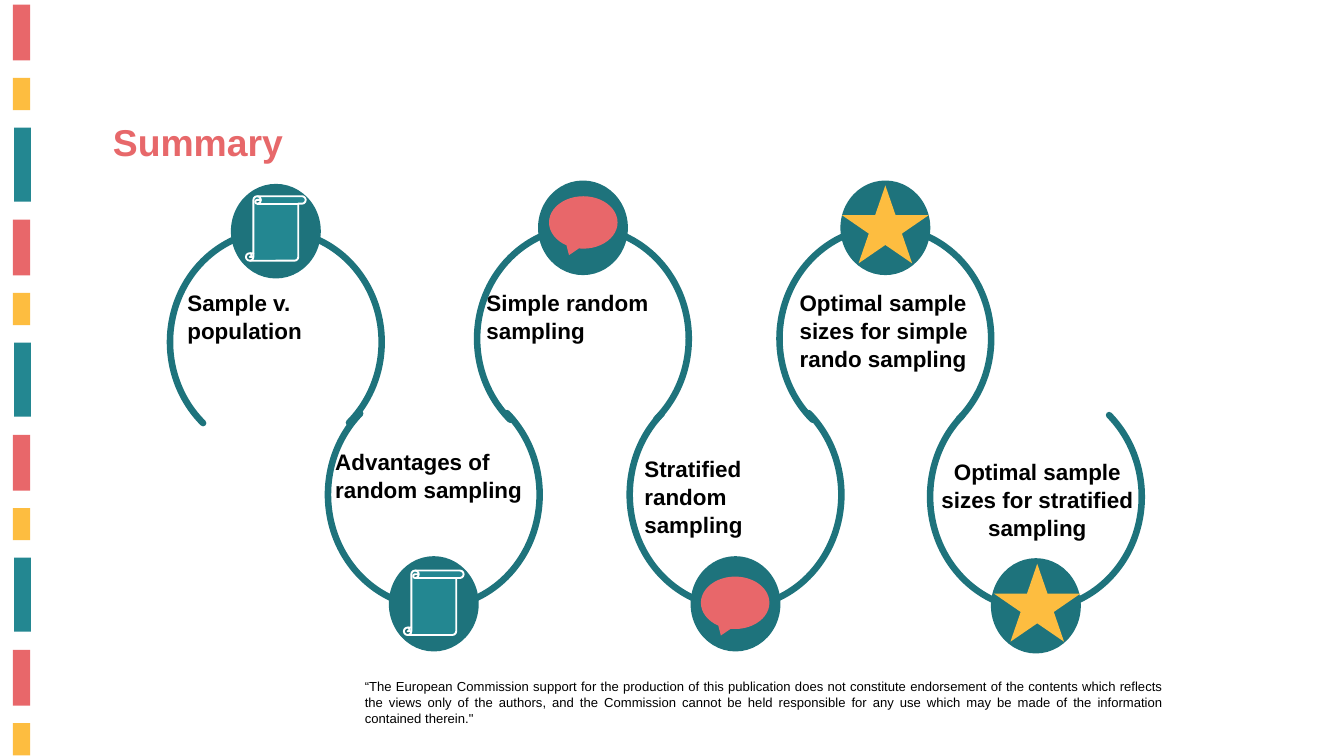
"""Build the Summary slide: six topics along a winding path."""
import pptx
import pptx.dml.color
import pptx.enum.shapes
import pptx.enum.text
import pptx.util

RGBColor = pptx.dml.color.RGBColor
CORAL = RGBColor(0xE8, 0x67, 0x6A)
TITLE_CORAL = RGBColor(0xE7, 0x68, 0x6A)
AMBER = RGBColor(0xFD, 0xBD, 0x40)
TEAL = RGBColor(0x23, 0x87, 0x91)
DEEP_TEAL = RGBColor(0x1E, 0x73, 0x7C)
BLACK = RGBColor(0, 0, 0)
WHITE = RGBColor(0xFF, 0xFF, 0xFF)

SHAPE = pptx.enum.shapes.MSO_SHAPE
ALIGN = pptx.enum.text.PP_ALIGN
Pt = pptx.util.Pt

deck = pptx.Presentation()
deck.slide_width = pptx.util.Inches(20)
deck.slide_height = pptx.util.Inches(11.25)
COLUMN = deck.slide_width / 20
ROW = deck.slide_height / 11.25
slide = deck.slides.add_slide(deck.slide_layouts[5])


def draw(parent, kind, left, top, width, height, fill=None, line=None, weight=0):
    shape = parent.add_shape(kind, int(left * COLUMN), int(top * ROW),
                             int(width * COLUMN), int(height * ROW))
    shape.shadow.inherit = False
    if fill is None:
        shape.fill.background()
    else:
        shape.fill.solid()
        shape.fill.fore_color.rgb = fill
    if line is None:
        shape.line.fill.background()
    else:
        shape.line.color.rgb = line
        shape.line.width = Pt(weight)
    return shape


def write(box, left, top, width, height, words, size, color, bold, align, spacing):
    box.left, box.top = int(left * COLUMN), int(top * ROW)
    box.width, box.height = int(width * COLUMN), int(height * ROW)
    frame = box.text_frame
    frame.word_wrap = True
    frame.auto_size = pptx.enum.text.MSO_AUTO_SIZE.NONE
    frame.vertical_anchor = pptx.enum.text.MSO_ANCHOR.TOP
    frame.text = words
    paragraph = frame.paragraphs[0]
    paragraph.alignment = align
    paragraph.line_spacing = spacing
    paragraph.font.name = "Arial"
    paragraph.font.size = Pt(size)
    paragraph.font.bold = bold
    paragraph.font.color.rgb = color


STRIPE_PERIOD = 3.2
STRIPES = [(0.19, 0.07, 0.26, 0.83, CORAL, 4),
           (0.19, 1.16, 0.26, 0.48, AMBER, 4),
           (0.21, 1.9, 0.25, 1.1, TEAL, 3)]
for left, top, width, height, color, count in STRIPES:
    for repeat in range(count):
        draw(slide.shapes, SHAPE.RECTANGLE, left, top + repeat * STRIPE_PERIOD,
             width, height, color)

write(slide.shapes.title, 1.58, 1.72, 6.58, 0.77, "Summary", 40, TITLE_CORAL,
      True, ALIGN.LEFT, 1)
write(slide.shapes.add_textbox(0, 0, 0, 0), 5.33, 10.04, 12.08, 0.81,
      "“The European Commission support for the production of this publication "
      "does not constitute endorsement of the contents which reflects the views "
      "only of the authors, and the Commission cannot be held responsible for any "
      "use which may be made of the information contained therein.\"",
      14, BLACK, False, ALIGN.JUSTIFY, 1.03)

SCROLL = (SHAPE.VERTICAL_SCROLL, 0.89, 0.96, TEAL, WHITE, 2)
SPEECH = (SHAPE.OVAL_CALLOUT, 1.02, 0.78, CORAL, None, 0)
STAR = (SHAPE.STAR_5_POINT, 1.29, 1.16, AMBER, None, 0)
TOPICS = [
    ("Sample v. population", 2.53, 3.43, False, (2.69, 4.24, 2.9, 1.31),
     SCROLL, (3.66, 2.92), ALIGN.LEFT),
    ("Advantages of random sampling", 4.88, 5.68, True, (4.89, 6.61, 3.08, 1.31),
     SCROLL, (6.01, 8.49), ALIGN.LEFT),
    ("Simple random sampling", 7.1, 3.38, False, (7.14, 4.24, 3.08, 1.31),
     SPEECH, (8.17, 2.92), ALIGN.LEFT),
    ("Stratified random sampling", 9.37, 5.68, True, (9.49, 6.71, 2.9, 1.72),
     SPEECH, (10.43, 8.58), ALIGN.LEFT),
    ("Optimal sample sizes for simple rando sampling", 11.6, 3.38, False,
     (11.8, 4.24, 2.75, 1.72), STAR, (12.53, 2.76), ALIGN.LEFT),
    ("Optimal sample sizes for stratified sampling", 13.84, 5.71, True,
     (13.89, 6.75, 3.09, 1.31), STAR, (14.79, 8.39), ALIGN.CENTER),
]
for words, left, top, flipped, label, icon, icon_corner, align in TOPICS:
    loop = slide.shapes.add_group_shape().shapes
    arc = draw(loop, SHAPE.ARC, left, top, 3.15, 3.36 if flipped else 3.32,
               None, DEEP_TEAL, 7)
    arc.adjustments[0], arc.adjustments[1] = 79.14, 28.68
    arc.rotation = 180 if flipped else 0
    arc.line._get_or_add_ln().set("cap", "rnd")
    draw(loop, SHAPE.OVAL, left + 0.92, top + (2.61 if flipped else -0.68),
         1.31, 1.39 if flipped else 1.38, DEEP_TEAL, DEEP_TEAL, 2)
    write(slide.shapes.add_textbox(0, 0, 0, 0), *label, words, 24, BLACK,
          True, align, 1.04)
    kind, width, height, fill, line, weight = icon
    draw(slide.shapes, kind, *icon_corner, width, height, fill, line, weight)

deck.save("out.pptx")
